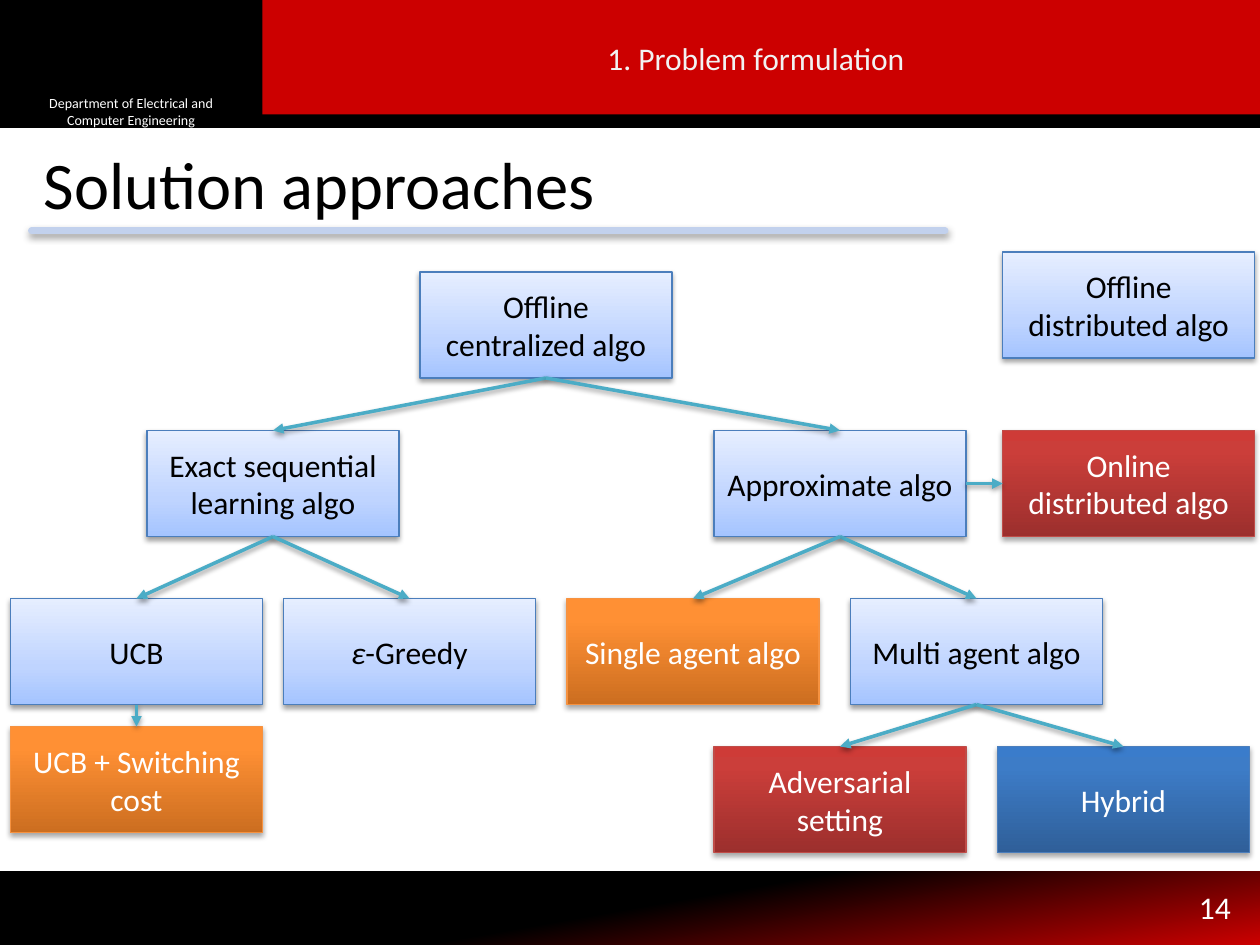
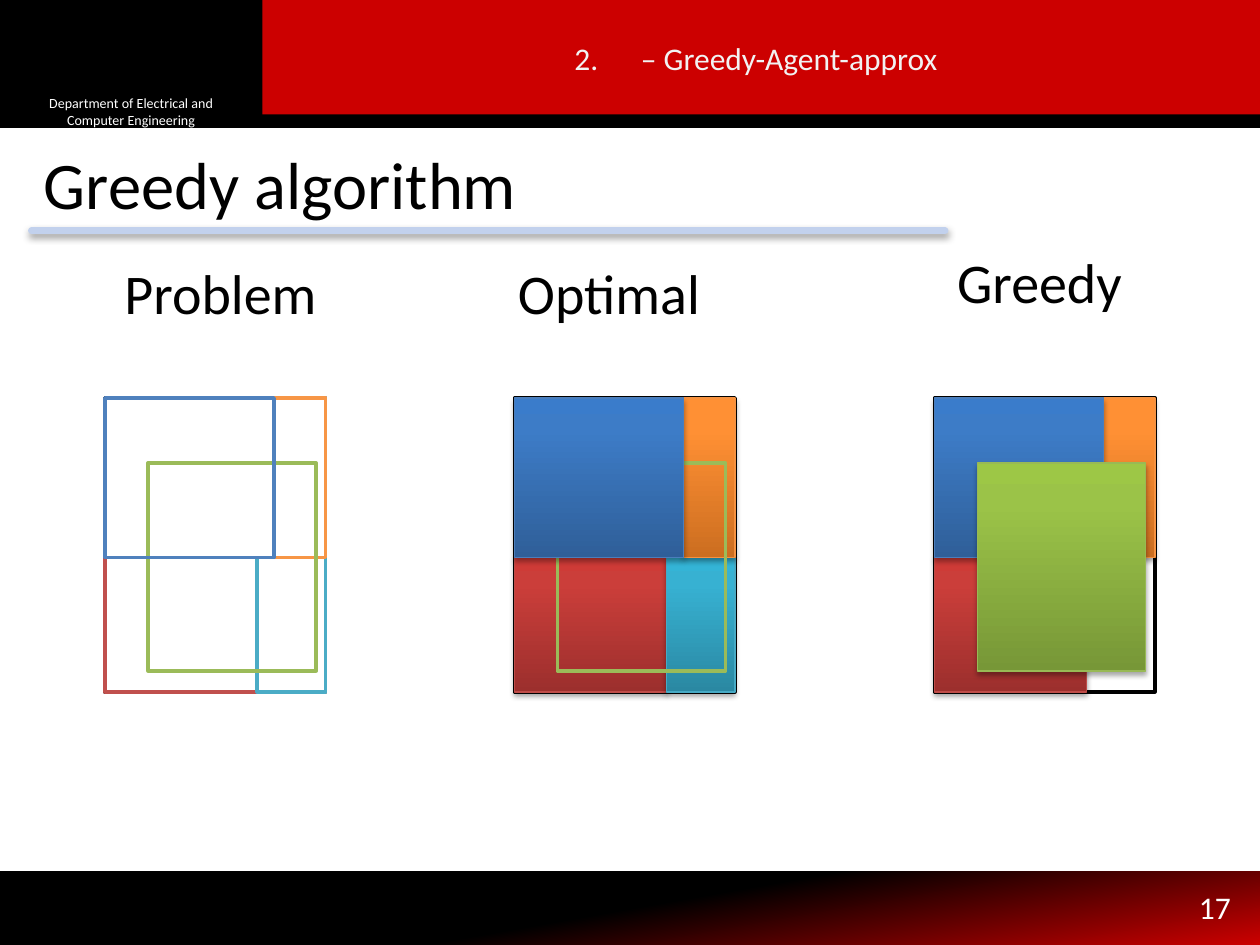
from dataclasses import dataclass

from lxml.etree import SubElement
from pptx import Presentation
from pptx.dml.color import RGBColor
from pptx.enum.shapes import MSO_CONNECTOR, MSO_SHAPE
from pptx.enum.text import MSO_ANCHOR, PP_ALIGN
from pptx.oxml.ns import qn
from pptx.util import Inches, Pt


@dataclass(frozen=True)
class Style:
    fill: object = None          # colour, or gradient stops as (percent, colour)
    line: str = None
    width: float = 0.75
    ink: str = "FFFFFF"
    shadow: tuple = None         # opacity %, blur pt, distance pt, angle
    angle: int = 90


class Theme:
    font = "Calibri"
    black, white, red = "000000", "FFFFFF", "CC0000"
    heading, rule, arrow = "F2F2F2", "C2D1ED", "4BACC6"
    title_size, column_size, body_size, small_size = 38, 32, 18, 8
    rule_shadow = (40, 4, 2, 85)
    pale_shadow = (38, 3.1, 1.6, 90)
    deep_shadow = (35, 3.1, 1.8, 90)
    pale = Style(((0, "A4C4FF"), (35, "BFD4FF"), (100, "E6EEFF")), "4B7EBC",
                 ink=black, shadow=pale_shadow)
    deep_colors = {              # gradient from bottom to top, then line
        "red": ("9C2F2D", "CB3E3A", "CE3B37", "BF4C48"),
        "orange": ("CC6E20", "FF9034", "FF9136", "F69240"),
        "blue": ("2F5F99", "3D7CC7", "3A7CCB", "4B7EBC"),
        "green": ("779737", "9BC348", "9DC746", "98B955"),
        "teal": ("2A88A2", "37B1D2", "34B4D6", "46AAC5"),
    }
    outline = {"red": "C0504D", "orange": "F79646", "blue": "4F81BD",
               "green": "9BBB59", "teal": "4BACC6", "frame": black}
    footer = Style(((50, black), (100, red)), angle=280)


pale = Theme.pale
deep = {
    name: Style(((0, low), (80, mid), (100, high)), line, shadow=Theme.deep_shadow)
    for name, (low, mid, high, line) in Theme.deep_colors.items()
}

prs = Presentation()
prs.slide_width, prs.slide_height = Inches(10), Inches(7.5)
U = prs.slide_width // 120       # the slide is a grid of 120 columns and 90 rows


def cast_shadow(s, shadow):
    """Replace the theme shadow by the given one, or by none."""
    effects = SubElement(s._element.spPr, qn("a:effectLst"))
    if shadow:
        opacity, blur, distance, angle = shadow
        outer = SubElement(effects, qn("a:outerShdw"), blurRad=str(Pt(blur)),
                           dist=str(Pt(distance)), dir=str(angle * 60000),
                           rotWithShape="0")
        color = SubElement(outer, qn("a:srgbClr"), val=Theme.black)
        SubElement(color, qn("a:alpha"), val=str(opacity * 1000))


def add_box(slide, at, style=None, runs=(), size=Theme.body_size, ink=None,
            align=PP_ALIGN.CENTER, anchor=MSO_ANCHOR.MIDDLE, wrap=True):
    """Add a rectangle placed in grid units; without a style, a text box."""
    place = [round(v * U) for v in at]
    if style is None:
        s = slide.shapes.add_textbox(*place)
    else:
        s = slide.shapes.add_shape(MSO_SHAPE.RECTANGLE, *place)
        if style.fill is None:
            s.fill.background()
        elif isinstance(style.fill, str):
            s.fill.solid()
            s.fill.fore_color.rgb = RGBColor.from_string(style.fill)
        else:
            s.fill.gradient()
            s.fill.gradient_angle = style.angle
            stops = s._element.spPr.find(".//" + qn("a:gsLst"))
            stops.clear()
            for percent, color in style.fill:
                stop = SubElement(stops, qn("a:gs"), pos=str(percent * 1000))
                SubElement(stop, qn("a:srgbClr"), val=color)
        if style.line:
            s.line.color.rgb = RGBColor.from_string(style.line)
            s.line.width = Pt(style.width)
        else:
            s.line.fill.background()
        cast_shadow(s, style.shadow)
    tf = s.text_frame
    tf.word_wrap, tf.vertical_anchor = wrap, anchor
    p = tf.paragraphs[0]
    p.alignment = align
    for text in runs:
        r = p.add_run()
        r.text = text
        r.font.name, r.font.size = Theme.font, Pt(size)
        r.font.color.rgb = RGBColor.from_string(ink or style.ink)
    return s


# Bands, section heading, title, rule and page number
slides = []
for section, title, number in (
    (["1. Problem formulation"], "Solution approaches", "14"),
    (["2.", " ", "– Greedy-Agent-approx"], "Greedy algorithm", "17"),
):
    slide = prs.slides.add_slide(prs.slide_layouts[6])
    add_box(slide, (0, 83, 120, 7), Theme.footer)
    add_box(slide, (0, 0, 120, 12), Style(Theme.black, Theme.black, 2))
    add_box(slide, (25, 0, 95, 10.9), Style(Theme.red))
    add_box(slide, (2, 9.1, 21, 3), Style(Theme.black),
            ["Department of Electrical and Computer Engineering"], Theme.small_size)
    rule = slide.shapes.add_connector(MSO_CONNECTOR.STRAIGHT, 3 * U, 22 * U, 90 * U, 22 * U)
    rule.line.color.rgb = RGBColor.from_string(Theme.rule)
    rule.line.width = Pt(4)
    rule._element.spPr.find(qn("a:ln")).set("cap", "rnd")
    cast_shadow(rule, Theme.rule_shadow)
    add_box(slide, (3, 13, 95, 10), None, [title], Theme.title_size, Theme.black,
            PP_ALIGN.LEFT, MSO_ANCHOR.TOP)
    heading = add_box(slide, (29, 2, 86, 7), None, section, ink=Theme.heading)
    add_box(slide, (113, 84, 5.5, 4.8), None, [number], ink=Theme.white,
            align=PP_ALIGN.LEFT, anchor=MSO_ANCHOR.TOP, wrap=False)
    slides.append(slide)
tree_slide, greedy_slide = slides

# The wide gap after the section number is letter spacing on one space
gap = heading.text_frame.paragraphs[0].runs[1]
gap._r.get_or_add_rPr().set("spc", "2030")

# Slide 1: tree of approaches
NODE_W, NODE_H = 24, 10.1
nodes = {}
for name, col, row, style, runs in (
    ("central", 40, 25.9, pale, ["Offline centralized algo"]),
    ("exact", 14, 41, pale, ["Exact sequential learning algo"]),
    ("approx", 68, 41, pale, ["Approximate algo"]),
    ("epsilon", 27, 57, pale, ["ε", "-Greedy"]),
    ("ucb", 1, 57, pale, ["UCB"]),
    ("switching", 1, 69.2, deep["orange"], ["UCB + Switching cost"]),
    ("multi", 81, 57, pale, ["Multi agent algo"]),
    ("single", 54, 57, deep["orange"], ["Single agent algo"]),
    ("adversarial", 68, 71.1, deep["red"], ["Adversarial setting"]),
    ("hybrid", 95, 71.1, deep["blue"], ["Hybrid"]),
    ("online", 95.5, 41, deep["red"], ["Online distributed algo"]),
    ("offline", 95.5, 24, pale, ["Offline distributed algo"]),
):
    nodes[name] = add_box(tree_slide, (col, row, NODE_W, NODE_H), style, runs)
nodes["epsilon"].text_frame.paragraphs[0].runs[0].font.italic = True

BOTTOM_TO_TOP, RIGHT_TO_LEFT = (2, 0), (3, 1)
for parent, child, (start, end) in (
    ("central", "exact", BOTTOM_TO_TOP),
    ("central", "approx", BOTTOM_TO_TOP),
    ("exact", "ucb", BOTTOM_TO_TOP),
    ("exact", "epsilon", BOTTOM_TO_TOP),
    ("approx", "multi", BOTTOM_TO_TOP),
    ("approx", "single", BOTTOM_TO_TOP),
    ("ucb", "switching", BOTTOM_TO_TOP),
    ("multi", "adversarial", BOTTOM_TO_TOP),
    ("multi", "hybrid", BOTTOM_TO_TOP),
    ("approx", "online", RIGHT_TO_LEFT),
):
    arrow = tree_slide.shapes.add_connector(MSO_CONNECTOR.STRAIGHT, 0, 0, 0, 0)
    arrow.begin_connect(nodes[parent], start)
    arrow.end_connect(nodes[child], end)
    arrow.line.color.rgb = RGBColor.from_string(Theme.arrow)
    arrow.line.width = Pt(2)
    SubElement(arrow._element.spPr.find(qn("a:ln")), qn("a:tailEnd"), type="triangle")
    cast_shadow(arrow, Theme.pale_shadow)

# Slide 2: one set of rectangles, covered in three ways
PIECES = {
    "frame": (0, 0, 21, 28),
    "red": (0, 15.2, 14.5, 12.8),
    "teal": (14.5, 15.2, 6.5, 12.8),
    "orange": (16.1, 0, 4.9, 15.2),
    "green": (4.1, 6.2, 16, 19.8),
    "blue": (0, 0, 16.1, 15.2),
}
PIECES_TOP = 37.9
for label, label_col, label_row, left, order, chosen in (
    ("Problem", 4, 24, 10, "frame red teal orange green blue", ""),
    ("Optimal", 41, 24, 49, "frame red teal orange green blue", "red teal orange blue"),
    ("Greedy", 82, 23, 89, "frame red orange blue green", "red orange blue green"),
):
    add_box(greedy_slide, (label_col, label_row, 34, 55), None, [label],
            Theme.column_size, Theme.black, anchor=MSO_ANCHOR.TOP)
    for name in order.split():
        x, y, w, h = PIECES[name]
        if name in chosen.split():
            style = deep[name]
        else:
            fill = None if name in ("green", "blue") else Theme.white
            style = Style(fill, Theme.outline[name], 2)
        add_box(greedy_slide, (left + x, PIECES_TOP + y, w, h), style)

prs.save("out.pptx")
